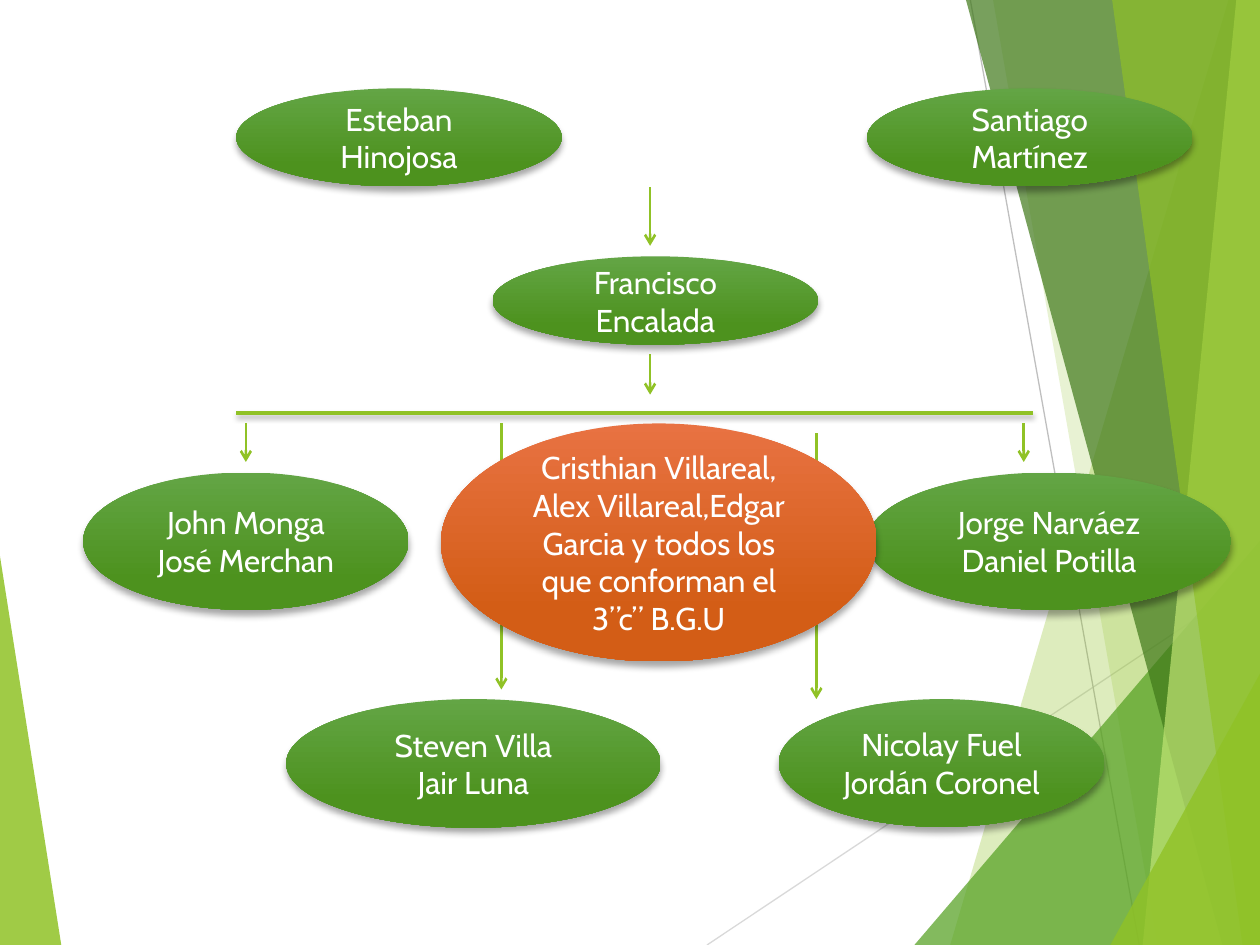
from lxml import etree
from pptx import Presentation
from pptx.dml.color import RGBColor
from pptx.enum.shapes import MSO_CONNECTOR, MSO_SHAPE
from pptx.enum.text import MSO_ANCHOR, PP_ALIGN
from pptx.oxml.ns import qn
from pptx.util import Pt

STRAIGHT = MSO_CONNECTOR.STRAIGHT
OVAL = MSO_SHAPE.OVAL
MIDDLE = MSO_ANCHOR.MIDDLE
CENTER = PP_ALIGN.CENTER

W, H = 720, 540
FONT, SIZE = "Cabin", 18
COLORS = {
    "lime": "90C226", "green": "54A021", "dark": "3F7819", "pale": "C0E474",
    "grey": "BFBFBF", "light_grey": "D9D9D9", "white": "FFFFFF", "black": "000000",
    "green_top": "63A545", "green_bottom": "4D921E",
    "orange_top": "E87242", "orange_bottom": "D35D16",
}

LEFT_WEDGE = ([(0, 318), (35, H), (0, H)], "lime", 85)
HAIRLINES = [(404, H, W, 329, "light_grey"), (554.5, 0, 651, H, "grey")]
RIGHT_FACETS = [
    ([(702, 0), (543, H), (W, H), (W, 0)], "lime", 30),
    ([(567.5, 0), (661.5, H), (W, H), (W, 0)], "lime", 20),
    ([(522.5, H), (W, 309), (W, H)], "green", 72),
    ([(552, 0), (698.5, H), (W, H), (W, 0)], "dark", 70),
    ([(706.5, 0), (653, H), (W, H), (W, 0)], "pale", 70),
    ([(635.5, 0), (710, H), (W, H), (W, 0)], "lime", 65),
    ([(634.5, H), (W, 385), (W, H)], "lime", 80),
]

BAR = (135, 236, 590.5, 236)
ARROWS = [
    (371.5, 107, 140.5), (371.5, 202.5, 225.5), (140.5, 242, 264),
    (585, 242, 264), (286.5, 242, 394), (466.5, 247.5, 399.5),
]
PEOPLE = [
    ("Esteban Hinojosa", 135, 50.5, 186, 56, "green"),
    ("Santiago Martínez", 495.5, 50.5, 186, 56, "green"),
    ("Francisco Encalada", 281.5, 146.5, 186, 50.5, "green"),
    ("John Monga\nJosé Merchan", 47.5, 270, 186, 78.5, "green"),
    ("Jorge Narváez\nDaniel Potilla", 495.5, 270, 208, 78.5, "green"),
    ("Steven Villa\nJair Luna", 163.5, 399.5, 214, 73.5, "green"),
    ("Nicolay Fuel\nJordán Coronel", 445, 399.5, 186, 73, "green"),
    ("Cristhian Villareal, Alex Villareal,Edgar Garcia y todos los que conforman el 3”c” B.G.U",
     252, 242, 249, 136, "orange"),
]


def rgb(name):
    return RGBColor.from_string(COLORS[name])


def set_alpha(color, percent):
    etree.SubElement(color, qn("a:alpha"), val=str(percent * 1000))


def set_effects(s, blur=0, dist=0):
    effects = etree.SubElement(s._element.spPr, qn("a:effectLst"))
    if blur:
        shadow = etree.SubElement(effects, qn("a:outerShdw"), blurRad=str(Pt(blur)),
                                  dist=str(Pt(dist)), dir="5400000", rotWithShape="0")
        color = etree.SubElement(shadow, qn("a:srgbClr"), val=COLORS["black"])
        set_alpha(color, 35)


def add_facet(slide, points, color, alpha):
    start, *rest = [(Pt(x), Pt(y)) for x, y in points]
    builder = slide.shapes.build_freeform(*start)
    builder.add_line_segments(rest)
    s = builder.convert_to_shape()
    s.fill.solid()
    s.fill.fore_color.rgb = rgb(color)
    set_alpha(s._element.spPr.find(".//" + qn("a:srgbClr")), alpha)
    s.line.fill.background()
    set_effects(s)


def add_line(slide, x1, y1, x2, y2, color, width, arrow=False, shadow=(0, 0)):
    s = slide.shapes.add_connector(STRAIGHT, Pt(x1), Pt(y1), Pt(x2), Pt(y2))
    s.line.color.rgb = rgb(color)
    s.line.width = Pt(width)
    if arrow:
        ln = s._element.spPr.find(qn("a:ln"))
        etree.SubElement(ln, qn("a:tailEnd"), type="arrow")
    set_effects(s, *shadow)


def add_person(slide, text, left, top, width, height, color):
    s = slide.shapes.add_shape(OVAL, Pt(left), Pt(top), Pt(width), Pt(height))
    s.fill.gradient()
    s.fill.gradient_angle = 270
    ends = (("top", 0), ("bottom", 0.78))
    for stop, (end, position) in zip(s.fill.gradient_stops, ends):
        stop.color.rgb = rgb(f"{color}_{end}")
        stop.position = position
    s.line.fill.background()
    set_effects(s, 4, 3)
    tf = s.text_frame
    tf.word_wrap = True
    tf.vertical_anchor = MIDDLE
    tf.text = text
    for p in tf.paragraphs:
        p.alignment = CENTER
        for r in p.runs:
            r.font.name = FONT
            r.font.size = Pt(SIZE)
            r.font.color.rgb = rgb("white")


def main():
    prs = Presentation()
    prs.slide_width, prs.slide_height = Pt(W), Pt(H)
    slide = prs.slides.add_slide(prs.slide_layouts[6])
    add_facet(slide, *LEFT_WEDGE)
    for hairline in HAIRLINES:
        add_line(slide, *hairline, 0.75)
    for facet in RIGHT_FACETS:
        add_facet(slide, *facet)
    add_line(slide, *BAR, "lime", 2, shadow=(3, 2))
    for x, y1, y2 in ARROWS:
        add_line(slide, x, y1, x, y2, "lime", 1.5, arrow=True)
    for person in PEOPLE:
        add_person(slide, *person)
    prs.save("out.pptx")


if __name__ == "__main__":
    main()
